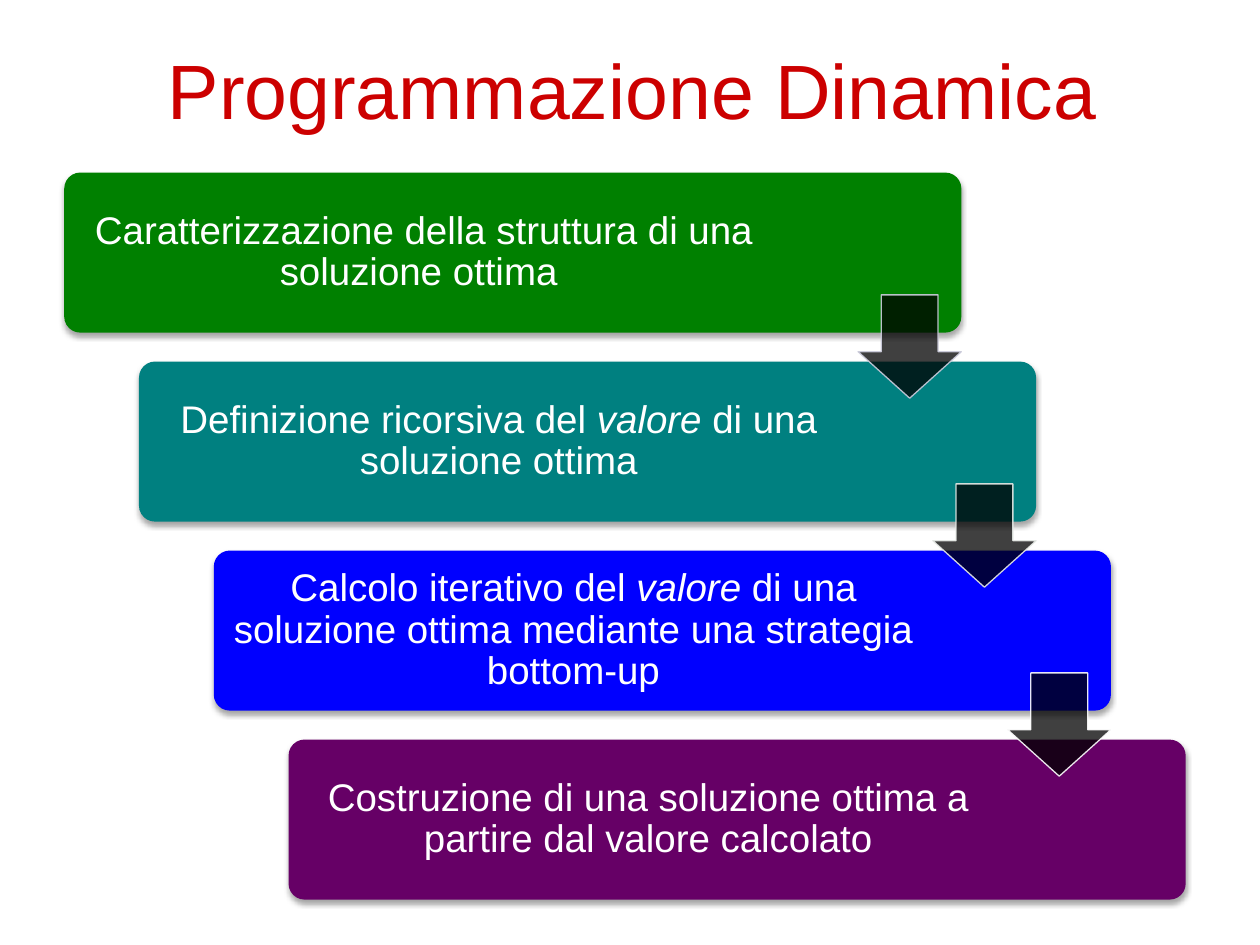
from typing import NamedTuple

from lxml import etree
from pptx import Presentation
from pptx import util as u
from pptx.dml.color import RGBColor
from pptx.enum import shapes, text
from pptx.oxml import ns

FONT = "Arial"
WHITE = "FFFFFF"
STEP_LEFT, STEP_TOP = 0.51, 1.37
SHIFT_X, SHIFT_Y = (2.29 - 0.51) / 3, 1.5
STEP_WIDTH, STEP_HEIGHT = 7.12, 1.27
ARROW_SIZE = 0.82
ARROW_DROP = 0.97


class Run(NamedTuple):
    wording: str
    italic: bool = False


class Step(NamedTuple):
    color: str
    runs: list[Run]
    arrow_line: str | None = None


STEPS = [
    Step("008000", [Run("Caratterizzazione della struttura di una soluzione ottima ")], "CECEDE"),
    Step("008080", [Run("Definizione ricorsiva del "), Run("valore", True),
                    Run(" di una soluzione ottima")], "E8ECE8"),
    Step("0000FF", [Run("Calcolo iterativo del "), Run("valore", True),
                    Run(" di una soluzione ottima mediante una strategia bottom-up")], WHITE),
    Step("660066", [Run("Costruzione di una soluzione ottima a partire dal valore calcolato")]),
]


def rgb(color: str) -> RGBColor:
    return RGBColor.from_string(color)


def add_alpha(color_element, percent: int) -> None:
    """Set the opacity of a colour element."""
    etree.SubElement(color_element, ns.qn("a:alpha"), val=str(percent * 1000))


def add_shadow(shape) -> None:
    """Give the shape a soft shadow straight below it."""
    shape.shadow.inherit = False
    effects = shape._element.spPr.find(ns.qn("a:effectLst"))
    shadow = etree.SubElement(
        effects, ns.qn("a:outerShdw"), blurRad=str(u.Pt(3.1)), dist=str(u.Pt(1.8)),
        dir="5400000", algn="ctr", rotWithShape="0")
    add_alpha(etree.SubElement(shadow, ns.qn("a:srgbClr"), val="000000"), 35)


def add_text(slide, left: float, top: float, width: float, height: float, runs: list[Run],
             size: float, color: str, spacing: float = 1.0, inset: float = 0.09) -> None:
    box = slide.shapes.add_textbox(*map(u.Inches, (left, top, width, height)))
    frame = box.text_frame
    frame.word_wrap = True
    frame.vertical_anchor = text.MSO_ANCHOR.MIDDLE
    frame.margin_left = frame.margin_right = u.Inches(inset)
    frame.margin_top = frame.margin_bottom = u.Inches(inset)
    paragraph = frame.paragraphs[0]
    paragraph.alignment = text.PP_ALIGN.CENTER
    paragraph.line_spacing = spacing
    for wording, italic in runs:
        run = paragraph.add_run()
        run.text = wording
        run.font.name = FONT
        run.font.size = u.Pt(size)
        run.font.italic = italic
        run.font.color.rgb = rgb(color)


def add_step(slide, index: int, step: Step) -> None:
    left, top = STEP_LEFT + index * SHIFT_X, STEP_TOP + index * SHIFT_Y
    card = slide.shapes.add_shape(
        shapes.MSO_SHAPE.ROUNDED_RECTANGLE,
        *map(u.Inches, (left, top, STEP_WIDTH, STEP_HEIGHT)))
    card.adjustments[0] = 0.1
    card.fill.solid()
    card.fill.fore_color.rgb = rgb(step.color)
    card.line.fill.background()
    add_shadow(card)
    add_text(slide, left + 0.04, top + 0.04, 5.63, 1.19, step.runs, 22, WHITE, spacing=0.9)


def add_arrow(slide, index: int, line_color: str) -> None:
    """Draw the arrow that leads from one step down to the next."""
    left = STEP_LEFT + index * SHIFT_X + STEP_WIDTH - ARROW_SIZE
    top = STEP_TOP + index * SHIFT_Y + ARROW_DROP
    arrow = slide.shapes.add_shape(
        shapes.MSO_SHAPE.DOWN_ARROW,
        *map(u.Inches, (left, top, ARROW_SIZE, ARROW_SIZE)))
    arrow.adjustments[0] = 0.55
    arrow.adjustments[1] = 0.45
    arrow.shadow.inherit = False
    arrow.fill.solid()
    arrow.fill.fore_color.rgb = rgb("000000")
    arrow.line.color.rgb = rgb(line_color)
    arrow.line.width = u.Pt(0.75)
    properties = arrow._element.spPr
    add_alpha(properties.find(ns.qn("a:solidFill"))[0], 75)
    add_alpha(properties.find(f"{ns.qn('a:ln')}/{ns.qn('a:solidFill')}")[0], 90)


def main() -> None:
    presentation = Presentation()
    presentation.slide_width, presentation.slide_height = u.Inches(10), u.Inches(7.5)
    slide = presentation.slides.add_slide(presentation.slide_layouts[6])
    add_text(slide, 0.75, 0.33, 8.71, 0.75, [Run("Programmazione Dinamica ")],
             44, "CC0000", inset=0.05)
    for index, step in enumerate(STEPS):
        add_step(slide, index, step)
    for index, step in enumerate(STEPS):
        if step.arrow_line:
            add_arrow(slide, index, step.arrow_line)
    presentation.save("out.pptx")


if __name__ == "__main__":
    main()
